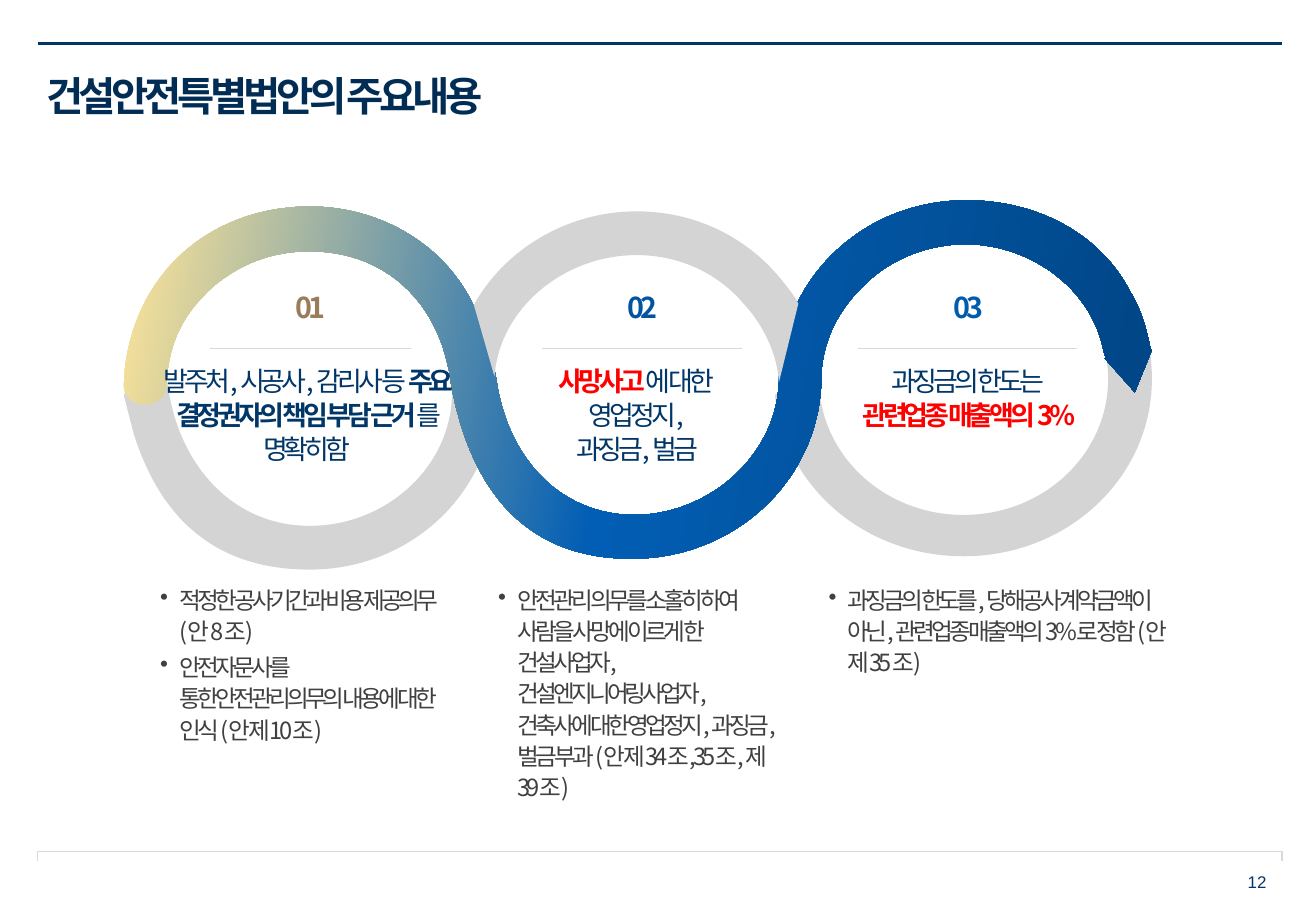
from copy import deepcopy

from lxml import etree
from pptx import Presentation
from pptx import util as u
from pptx.dml.color import RGBColor
from pptx.enum import shapes, text
from pptx.oxml.ns import qn

CELL = u.Inches(0.01)
COLS, ROWS = 1083, 750
FONT = "Noto Sans CJK KR"
NAVY = RGBColor(0x01, 0x36, 0x68)
DEEP = RGBColor(0x01, 0x2D, 0x55)
GREY = RGBColor(0xD4, 0xD4, 0xD4)
RULE = RGBColor(0xD9, 0xD9, 0xD9)
DARK = RGBColor(0x40, 0x40, 0x40)
RED = RGBColor(0xFF, 0x00, 0x00)
TAN = RGBColor(0x99, 0x7D, 0x5B)
BLUE = RGBColor(0x02, 0x54, 0xA1)
AZURE = RGBColor(0x02, 0x5B, 0xAD)
FADE = [(0, RGBColor(0xFF, 0xE6, 0x99)), (0.48, RGBColor(0x02, 0x5E, 0xB4)),
        (1, RGBColor(0x01, 0x45, 0x84))]

RIGHT = """M 941 268 C 946 282 948 297 948 312 C 948 393 879 458 793 458
C 712 458 646 401 638 327 L 638 325 L 674 307 L 674 312 C 674 374 727 424 793 424
C 859 424 912 374 912 312 C 912 300 910 289 906 279 L 904 272 Z"""
LEFT = """M 118 256 C 127 275 133 289 139 323 C 149 383 191 433 255 433
C 318 433 372 384 372 323 L 372 319 L 407 319 L 407 323 C 407 404 339 469 255 469
C 180 469 133 430 110 357 L 102 326 Z"""
WAVE = """M 254 170 C 313 170 364 201 388 248 C 397 267 403 281 409 315
C 418 375 459 424 523 424 C 586 423 640 373 641 313 C 642 232 708 166 793 165
C 853 164 906 193 930 240 C 930 240 941 255 947 288 L 947 288 L 948 288 L 934 323
L 910 296 L 910 296 L 910 296 L 909 295 L 910 295 L 908 288
C 898 238 849 201 793 201 C 761 202 732 214 711 235
C 690 255 676 282 676 312 C 675 393 607 459 522 460 C 438 461 388 410 371 315
C 371 315 370 306 369 303 C 357 244 313 206 253 207 C 221 207 192 220 171 240
C 153 258 142 276 138 305 L 137 315 L 137 316 C 137 326 129 333 119 333
C 112 333 106 329 103 323 L 102 318 L 102 318 L 102 317 L 102 317 L 102 316
L 103 302 C 113 223 174 171 254 170 Z"""
CROWN = """M 407 310 C 411 254 464 210 524 210 C 559 210 591 225 612 250
C 612 250 639 277 641 315 C 657 250 657 250 657 250 C 654 243 642 229 642 229
C 642 229 642 229 642 229 C 614 195 572 174 524 174 C 466 174 415 206 390 251 Z"""

TOPICS = [
    dict(no="01", hue=TAN, tag=(175, 161), rule=(173, 338), head=(118, 269), note=(122, 251),
         runs=[("발주처, 시공사, 감리사 등 ", NAVY, False),
               ("주요 결정권자의 책임 부담 근거", NAVY, True), ("를 명확히함", NAVY, False)],
         points=["적정한 공사기간과 비용 제공의무 (안 8조)",
                 "안전자문사를 통한안전관리의무의 내용에 대한 인식 (안 제10조)"]),
    dict(no="02", hue=BLUE, tag=(456, 145), rule=(446, 611), head=(416, 217), note=(400, 251),
         runs=[("사망사고", RED, True), ("에 대한 \n영업정지, \n과징금, 벌금", NAVY, False)],
         points=["안전관리 의무를 소홀히 하여 사람을 사망에 이르게 한 건설사업자, "
                 "건설엔지니어링사업자, 건축사에 대한 영업정지, 과징금, 벌금 부과 "
                 "(안 제34조, 35조, 제39조)"]),
    dict(no="03", hue=AZURE, tag=(707, 180), rule=(706, 886), head=(689, 217), note=(672, 310),
         runs=[("과징금의 한도는 \n", NAVY, False), ("관련업종 매출액의 3%", RED, True)],
         points=["과징금의 한도를, 당해공사 계약금액이 아닌, 관련업종 매출액의 3%로 정함 "
                 "(안 제35조)"]),
]


def write(para, words, size=16, hue=NAVY, bold=False, font=FONT, gap=-2.3,
          align=text.PP_ALIGN.LEFT, lead=None, after=None, dot=False):
    if dot:
        props = para._p.get_or_add_pPr()
        props.set("marL", str(16 * CELL))
        props.set("indent", str(-16 * CELL))
        etree.SubElement(props, qn("a:buChar")).set("char", "•")
    para.alignment = align
    if lead:
        para.line_spacing = lead
    if after:
        para.space_after = u.Pt(after)
    for i, part in enumerate(words.split("\n")):
        if i:
            para.add_line_break()
        if not part:
            continue
        run = para.add_run()
        run.text = part
        run.font.size = u.Pt(size)
        run.font.bold = bold
        run.font.color.rgb = hue
        run.font.name = font
        props = run._r.get_or_add_rPr()
        etree.SubElement(props, qn("a:ea")).set("typeface", FONT)
        if gap:
            props.set("spc", str(round(gap * 100)))


def trace(path):
    toks = iter(path.split())
    cmds, spots = [], []
    for cmd in toks:
        cmds.append(cmd)
        for _ in range({"C": 3, "Z": 0}.get(cmd, 1)):
            spots.append((int(next(toks)) * CELL, int(next(toks)) * CELL))
    return cmds, spots


def bend(form, cmds):
    legs = iter(form._element.spPr.findall(".//" + qn("a:lnTo")))
    for cmd in cmds:
        if cmd == "L":
            next(legs)
        elif cmd == "C":
            arc = next(legs)
            arc.tag = qn("a:cubicBezTo")
            for _ in range(2):
                leg = next(legs)
                arc.append(leg[0])
                leg.getparent().remove(leg)


class Deck:
    def __init__(self):
        self.prs = Presentation()
        self.prs.slide_width, self.prs.slide_height = COLS * CELL, ROWS * CELL
        self.page = self.prs.slides.add_slide(self.prs.slide_layouts[5])

    def title(self, words, x, y, w, h):
        box = self.page.shapes.title
        box.left, box.top, box.width, box.height = (v * CELL for v in (x, y, w, h))
        box.text_frame.vertical_anchor = text.MSO_ANCHOR.MIDDLE
        write(box.text_frame.paragraphs[0], words, size=24, hue=DEEP, bold=True,
              font="Arial", gap=-2.6, lead=1.09)

    def box(self, x, y, w, h, anchor=text.MSO_ANCHOR.TOP):
        frame = self.page.shapes.add_textbox(*(v * CELL for v in (x, y, w, h))).text_frame
        frame.word_wrap = True
        frame.vertical_anchor = anchor
        return frame

    def line(self, x1, x2, y, hue, width):
        rule = self.page.shapes.add_connector(
            shapes.MSO_CONNECTOR.STRAIGHT, x1 * CELL, y * CELL, x2 * CELL, y * CELL)
        rule.line.color.rgb = hue
        rule.line.width = u.Pt(width)
        etree.SubElement(rule._element.spPr, qn("a:effectLst"))

    def shape(self, path, fill=None, edge=None):
        cmds, spots = trace(path)
        pen = self.page.shapes.build_freeform(*spots[0], scale=1.0)
        pen.add_line_segments(spots[1:], close=cmds[-1] == "Z")
        form = pen.convert_to_shape()
        bend(form, cmds)
        form.shadow.inherit = False
        if edge:
            form.line.color.rgb = edge
            form.line.width = u.Pt(0.75)
        else:
            form.line.fill.background()
        if fill is None:
            form.fill.background()
        elif fill is FADE:
            self.fade(form)
        else:
            form.fill.solid()
            form.fill.fore_color.rgb = fill

    def fade(self, form):
        form.fill.gradient()
        form.fill.gradient_angle = 350
        stops = form._element.spPr.find(".//" + qn("a:gsLst"))
        stops.append(deepcopy(stops[0]))
        for stop, (place, hue) in zip(form.fill.gradient_stops, FADE):
            stop.position = place
            stop.color.rgb = hue

    def topic(self, no, hue, tag, rule, head, note, runs, points):
        mid = text.PP_ALIGN.CENTER
        write(self.box(tag[0], 234, tag[1], 44).paragraphs[0], no,
              size=17, hue=hue, bold=True, align=mid)
        self.line(*rule, 287, RULE, 0.5)
        para = self.box(head[0], 294, head[1], 93).paragraphs[0]
        for words, tone, bold in runs:
            write(para, words, hue=tone, bold=bold, align=mid, lead=1.05)
        frame = self.box(note[0], 475, note[1], 166)
        for i, words in enumerate(points):
            para = frame.add_paragraph() if i else frame.paragraphs[0]
            write(para, words, size=14, hue=DARK, lead=1.1, after=3, dot=True)


def main():
    deck = Deck()
    deck.shape("M 31 709 L 31 701 L 1055 701 L 1055 709", edge=RULE)
    deck.line(31, 1055, 36, NAVY, 2)
    deck.title("건설안전특별법안의 주요내용", 28, 44, 1027, 65)
    for path, fill in ((RIGHT, GREY), (LEFT, GREY), (WAVE, FADE), (CROWN, GREY)):
        deck.shape(path, fill)
    for topic in TOPICS:
        deck.topic(**topic)
    foot = deck.box(808, 706, 244, 40, text.MSO_ANCHOR.MIDDLE)
    write(foot.paragraphs[0], "12", size=10, font="Arial", gap=0, align=text.PP_ALIGN.RIGHT)
    deck.prs.save("out.pptx")


if __name__ == "__main__":
    main()
